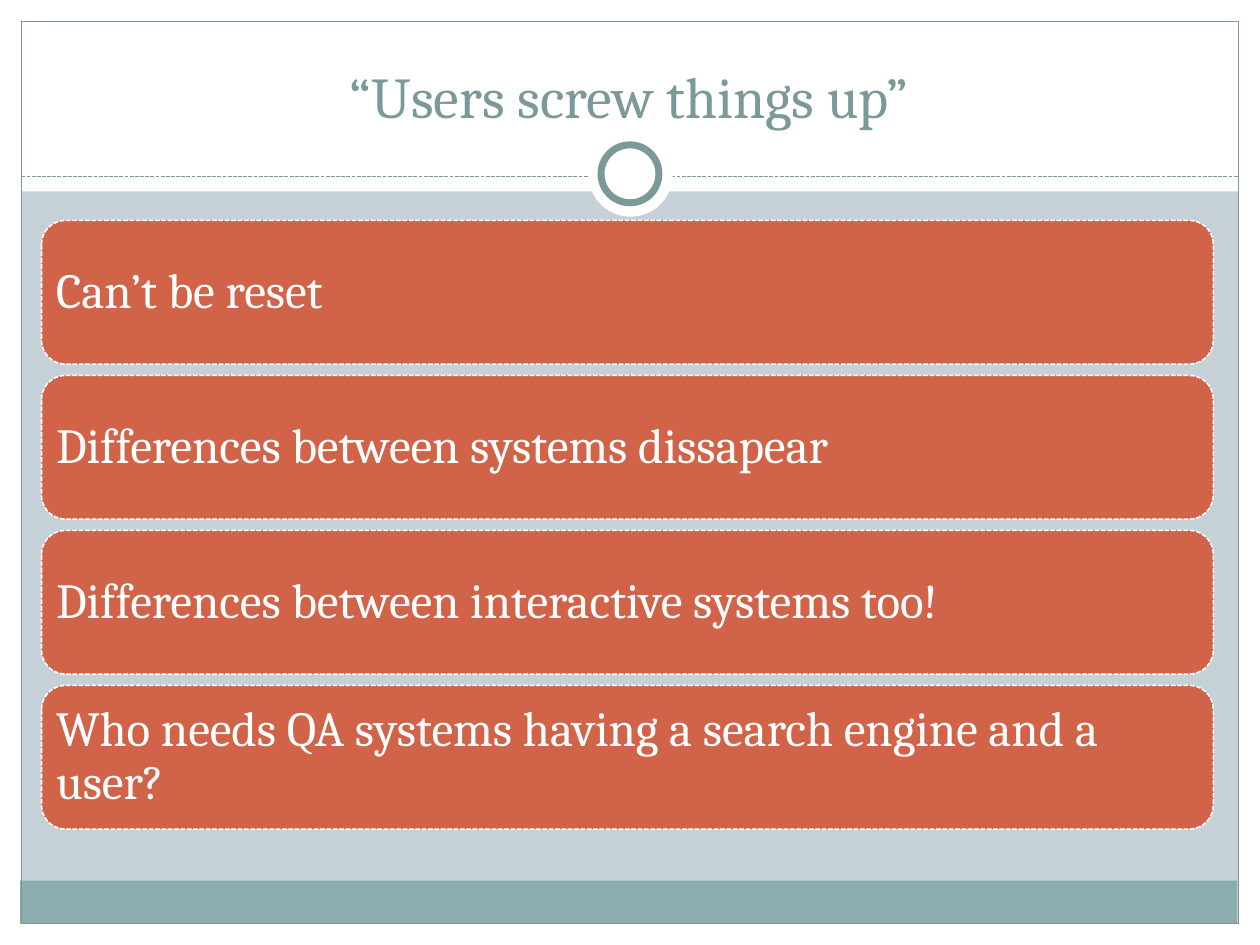
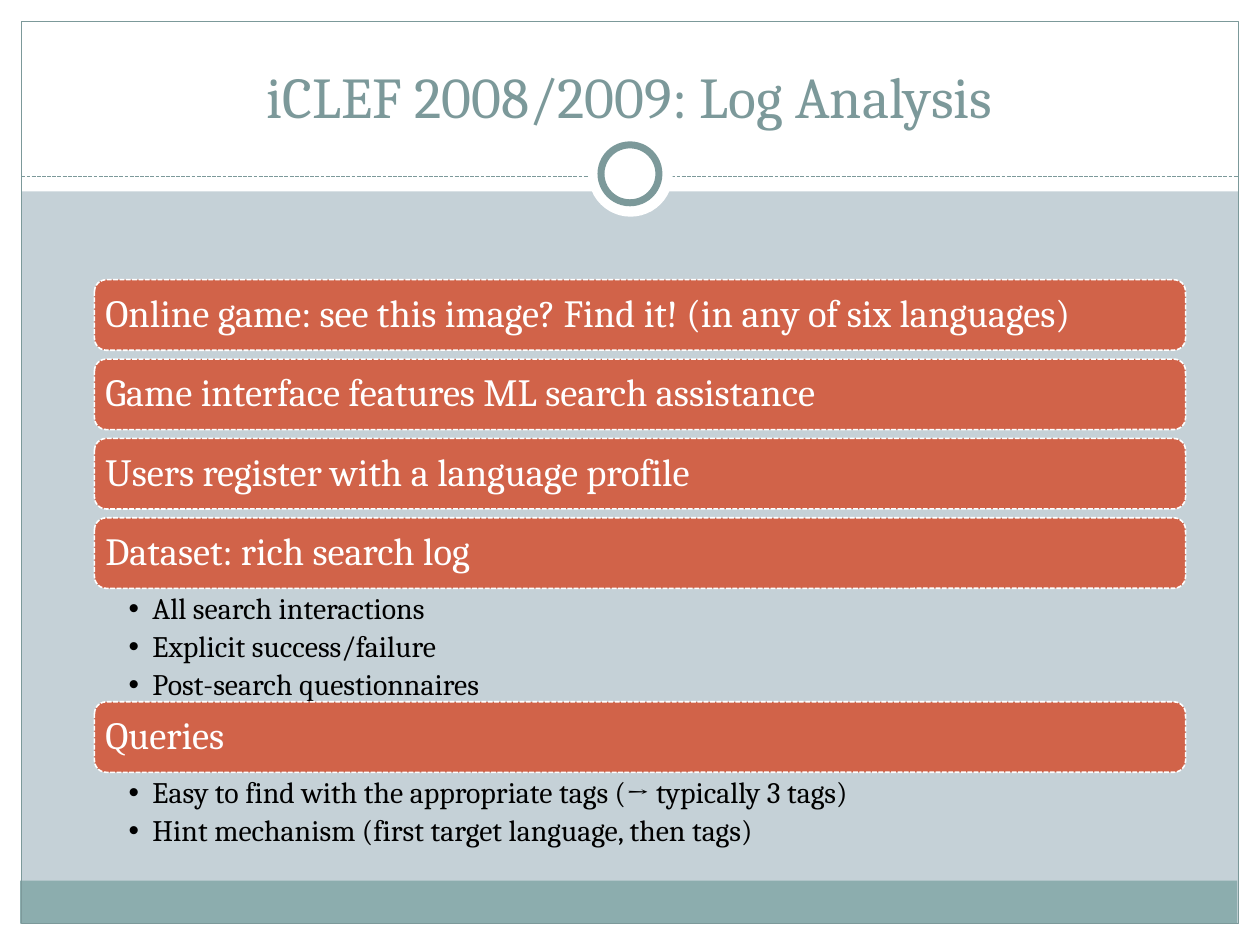
from lxml.etree import SubElement
from pptx import Presentation
from pptx.dml.color import RGBColor
from pptx.enum.dml import MSO_LINE as Dash
from pptx.enum.shapes import MSO_CONNECTOR as Link, MSO_SHAPE as Form
from pptx.enum.text import MSO_ANCHOR as Anchor, MSO_AUTO_SIZE as Fit, PP_ALIGN as Align
from pptx.oxml.ns import qn
from pptx.util import Pt

SCALE = 9144  # EMU in one px, at 100 px to the inch
FONT = "Cambria"
COLORS = {
    "back": "C5D1D7",
    "white": "FFFFFF",
    "band": "8CADAE",
    "edge": "7C999A",
    "card": "D16349",
    "ink": "000000",
}
TITLE_ONLY, TWO_LISTS = 5, 3


def px(*sizes):
    return [size * SCALE for size in sizes]


def color(name):
    return RGBColor.from_string(COLORS[name])


def style_line(line, name, width, dash=None):
    line.color.rgb = color(name)
    line.width = Pt(width)
    if dash:
        line.dash_style = dash


def style_text(para, size, name, align=Align.LEFT):
    para.alignment = align
    for run in para.runs:
        run.font.name = FONT
        run.font.size = Pt(size)
        run.font.color.rgb = color(name)


def set_insets(frame, left, top, right, bottom):
    frame.margin_left, frame.margin_top, frame.margin_right, frame.margin_bottom = px(
        left, top, right, bottom)


def place(shape, *box):
    shape.left, shape.top, shape.width, shape.height = px(*box)


def add_form(slide, form, box, fill=None):
    """Add a flat preset shape with no outline."""
    shape = slide.shapes.add_shape(form, *px(*box))
    shape.shadow.inherit = False
    if fill:
        shape.fill.solid()
        shape.fill.fore_color.rgb = color(fill)
    else:
        shape.fill.background()
    shape.line.fill.background()
    return shape


def add_rule(slide, left, right, y):
    rule = slide.shapes.add_connector(Link.STRAIGHT, *px(left, y, right, y))
    style_line(rule.line, "edge", 0.75, Dash.SQUARE_DOT)
    SubElement(rule._element.spPr, qn("a:effectLst"))
    return rule


def build_master(master, slide):
    """Draw the shared decor on a slide, then move it to the master."""
    master.background.fill.solid()
    master.background.fill.fore_color.rgb = color("back")
    margins = [(0, 733, 1000, 17), (0, 0, 1000, 152), (0, 0, 17, 750), (983, 0, 17, 750)]
    decor = [add_form(slide, Form.RECTANGLE, box, "white") for box in margins]
    decor.append(add_form(slide, Form.RECTANGLE, (16, 699, 966, 34), "band"))
    border = add_form(slide, Form.RECTANGLE, (17, 17, 966, 716))
    style_line(border.line, "edge", 0.75)
    rule = add_rule(slide, 17, 983, 140)
    disc = add_form(slide, Form.OVAL, (467, 105, 67, 67), "white")
    ring = add_form(slide, Form.OVAL, (477, 115, 46, 46), "white")
    style_line(ring.line, "edge", 4)
    for shape in decor + [border, rule, disc, ring]:
        master.shapes._spTree.append(shape._element)


def set_title(slide, text):
    title = slide.shapes.title
    place(title, 33, 25, 933, 83)
    frame = title.text_frame
    frame.text = text
    frame.auto_size = Fit.NONE
    frame.vertical_anchor = Anchor.BOTTOM
    style_text(frame.paragraphs[0], 33, "edge", Align.CENTER)


def add_card(slide, text, box, size):
    card = add_form(slide, Form.ROUNDED_RECTANGLE, box, "card")
    style_line(card.line, "white", 0.9, Dash.SQUARE_DOT)
    frame = card.text_frame
    frame.word_wrap = True
    frame.vertical_anchor = Anchor.MIDDLE
    set_insets(frame, 6, 6, 6, 6)
    frame.text = text
    frame.paragraphs[0].line_spacing = 0.9
    style_text(frame.paragraphs[0], size, "white")


def fill_list(holder, items, box):
    place(holder, *box)
    frame = holder.text_frame
    frame.auto_size = Fit.NONE
    frame.vertical_anchor = Anchor.TOP
    set_insets(frame, 27, 3, 17, 3)
    frame.text = "\n".join(items)
    for para in frame.paragraphs:
        props = para._p.get_or_add_pPr()
        props.set("marL", str(19 * SCALE))
        props.set("indent", str(-19 * SCALE))
        SubElement(props, qn("a:buChar"), char="•")
        para.line_spacing = 0.9
        para.space_before = Pt(0)
        para.space_after = Pt(3.4)
        style_text(para, 17, "ink")


def fill_users(slide):
    set_title(slide, "“Users screw things up”")
    claims = [
        "Can’t be reset",
        "Differences between systems dissapear",
        "Differences between interactive systems too!",
        "Who needs QA systems having a search engine and a user?",
    ]
    for row, claim in enumerate(claims):
        add_card(slide, claim, (33, 175 + 123 * row, 930, 114), 28)


def fill_log(slide):
    set_title(slide, "iCLEF 2008/2009: Log Analysis")
    left, width, high = 75, 866, 56
    topics = [
        "Online game: see this image? Find it! (in any of six languages)",
        "Game interface features ML search assistance",
        "Users register with a language profile",
        "Dataset: rich search log",
    ]
    for row, topic in enumerate(topics):
        add_card(slide, topic, (left, 222 + 63 * row, width, high), 22)
    add_card(slide, "Queries", (left, 557, width, high), 22)
    fill_list(slide.placeholders[1], [
        "All search interactions",
        "Explicit success/failure",
        "Post-search questionnaires",
    ], (left, 468, width, 90))
    fill_list(slide.placeholders[2], [
        "Easy to find with the appropriate tags (→ typically 3 tags)",
        "Hint mechanism (first target language, then tags)",
    ], (left, 614, width, 61))


def main():
    deck = Presentation()
    deck.slide_width, deck.slide_height = px(1000, 750)
    users = deck.slides.add_slide(deck.slide_layouts[TITLE_ONLY])
    build_master(deck.slide_master, users)
    fill_users(users)
    fill_log(deck.slides.add_slide(deck.slide_layouts[TWO_LISTS]))
    deck.save("out.pptx")


if __name__ == "__main__":
    main()
